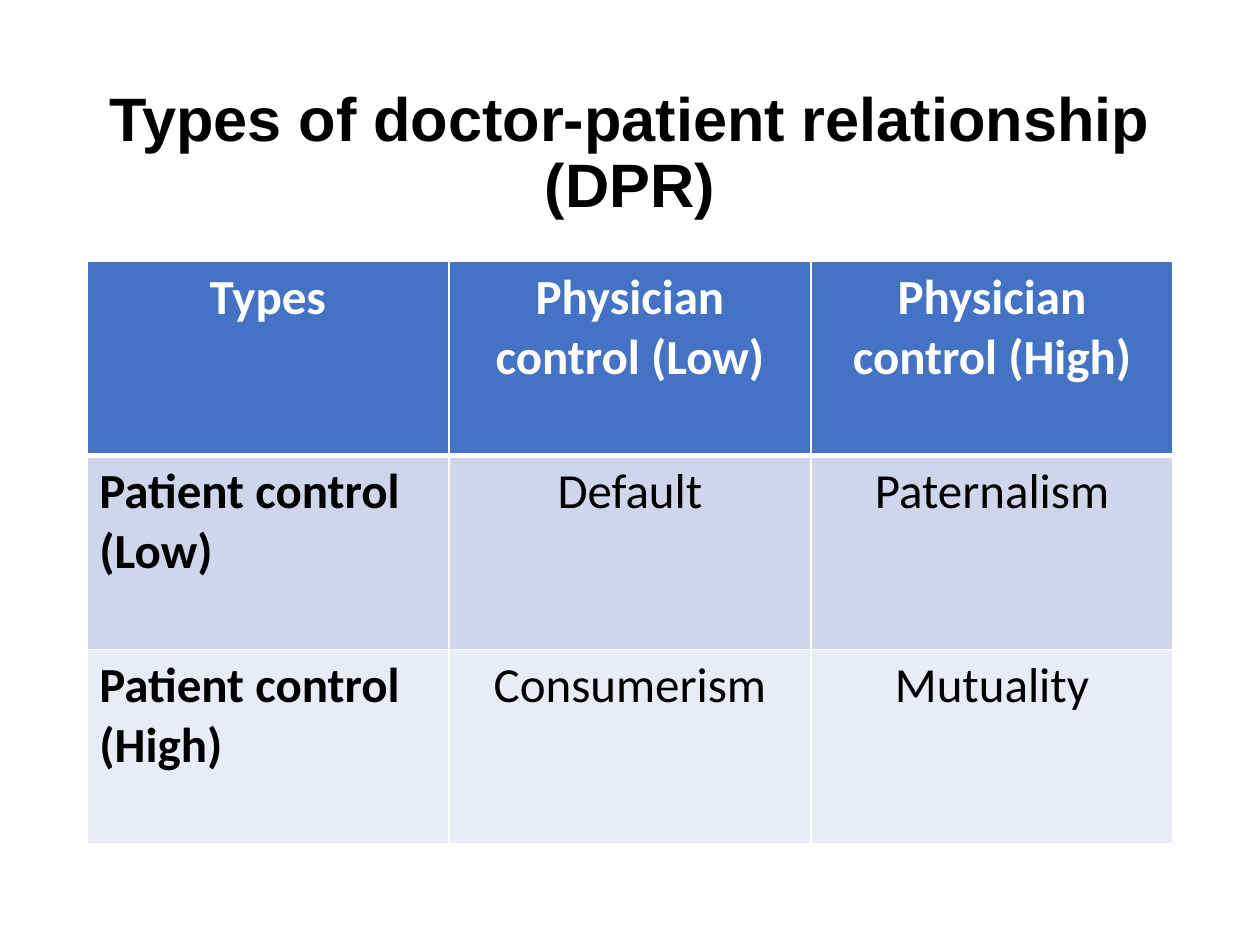
from lxml.etree import SubElement
from pptx import Presentation
from pptx.dml.color import RGBColor
from pptx.enum.text import MSO_ANCHOR as Anchor, PP_ALIGN as Align
from pptx.oxml.ns import qn
from pptx.util import Cm, Pt

BLACK = RGBColor(0x00, 0x00, 0x00)
WHITE = RGBColor(0xFF, 0xFF, 0xFF)
HEADER_BLUE = RGBColor(0x44, 0x72, 0xC4)
BAND_DARK = RGBColor(0xCF, 0xD5, 0xEA)
BAND_LIGHT = RGBColor(0xE9, 0xEB, 0xF5)
ROW_FILLS = (HEADER_BLUE, BAND_DARK, BAND_LIGHT)

HEADING = "Types of doctor-patient relationship (DPR)"
RELATIONSHIPS = (
    (("Types",), ("Physician", "control (Low)"), ("Physician", "control (High)")),
    (("Patient control", "(Low)"), ("Default",), ("Paternalism",)),
    (("Patient control", "(High)"), ("Consumerism",), ("Mutuality",)),
)


def add_line(paragraph, text, font_name, size, color, bold, align):
    """Write one formatted run into a paragraph."""
    paragraph.alignment = align
    run = paragraph.add_run()
    run.text = text
    run.font.name = font_name
    run.font.size = Pt(size)
    run.font.bold = bold
    run.font.color.rgb = color


def set_borders(cell, bottom_width):
    """Give a cell white borders with the given bottom width in points."""
    properties = cell._tc.get_or_add_tcPr()
    widths = {"a:lnL": 1, "a:lnR": 1, "a:lnT": 1, "a:lnB": bottom_width}
    for tag, width in widths.items():
        border = SubElement(properties, qn(tag), w=str(Pt(width)))
        fill = SubElement(border, qn("a:solidFill"))
        SubElement(fill, qn("a:srgbClr"), val=str(WHITE))


def add_heading(slide, left, top, width, height):
    """Place the centred heading in the given box."""
    heading = slide.shapes.add_textbox(left, top, width, height).text_frame
    heading.word_wrap = True
    heading.vertical_anchor = Anchor.MIDDLE
    line = heading.paragraphs[0]
    line.line_spacing = 0.9
    add_line(line, HEADING, "Arial", 35, BLACK, True, Align.CENTER)


def add_relationship_table(slide, left, top, width, height):
    """Place the grid of patient and physician control in the given box."""
    row_count, column_count = len(RELATIONSHIPS), len(RELATIONSHIPS[0])
    table = slide.shapes.add_table(
        row_count, column_count, left, top, width, height).table
    for row, entries in enumerate(RELATIONSHIPS):
        is_header = row == 0
        for column, lines in enumerate(entries):
            cell = table.cell(row, column)
            set_borders(cell, 3 if is_header else 1)
            cell.fill.solid()
            cell.fill.fore_color.rgb = ROW_FILLS[row]
            is_label = column == 0 and not is_header
            for index, text in enumerate(lines):
                frame = cell.text_frame
                paragraph = frame.add_paragraph() if index else frame.paragraphs[0]
                add_line(paragraph, text, "Calibri", 28,
                         WHITE if is_header else BLACK,
                         is_header or is_label,
                         Align.LEFT if is_label else Align.CENTER)


def main():
    """Build and save the slide."""
    deck = Presentation()
    deck.slide_width, deck.slide_height = Cm(25.4), Cm(19.05)
    slide = deck.slides.add_slide(deck.slide_layouts[6])
    add_heading(slide, Cm(1.75), Cm(1.55), Cm(21.9), Cm(3.15))
    add_relationship_table(slide, Cm(1.75), Cm(5.27), Cm(21.9), Cm(11.73))
    deck.save("out.pptx")


if __name__ == "__main__":
    main()
